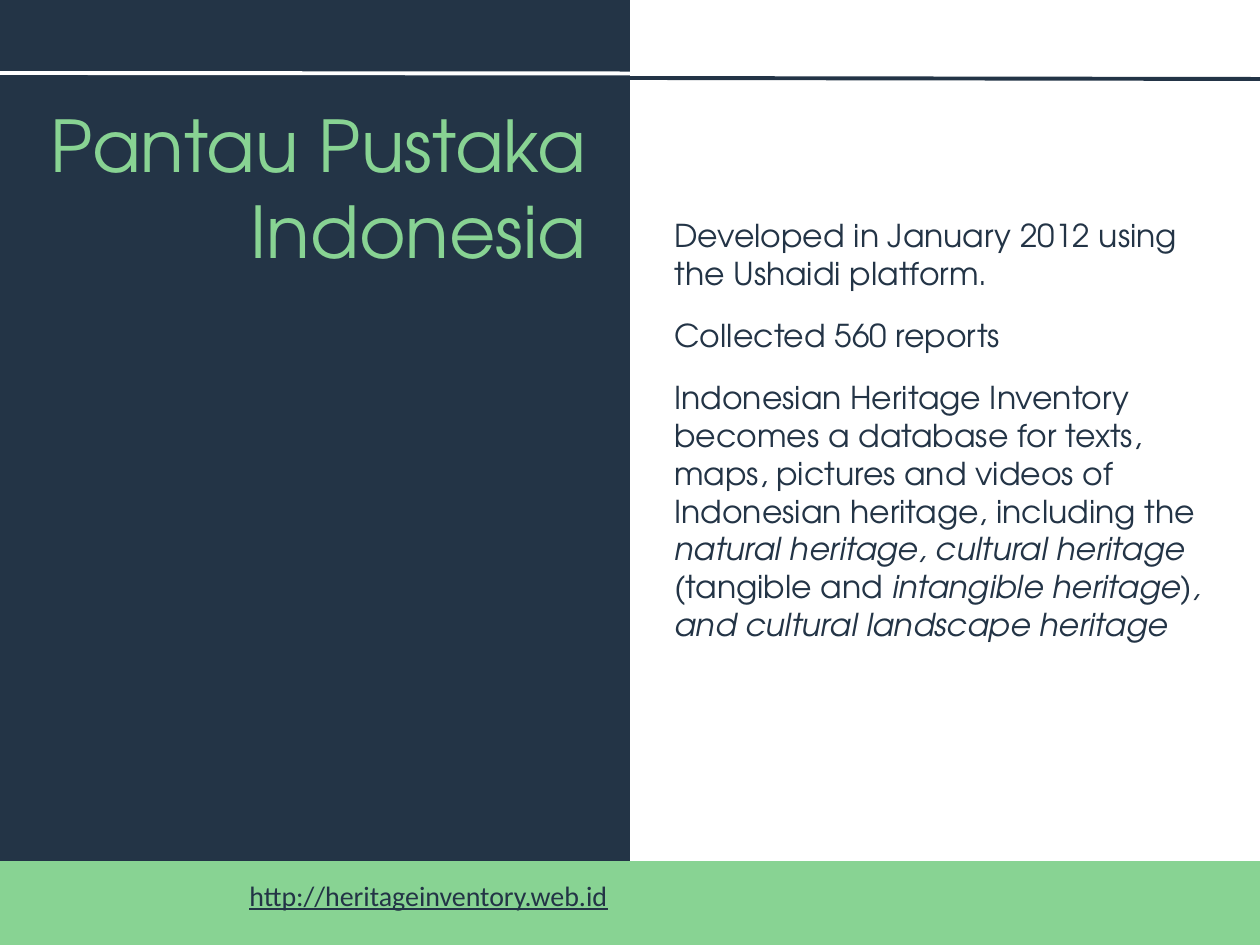
from lxml import etree
from pptx import Presentation
from pptx.dml.color import RGBColor
from pptx.enum.shapes import MSO_CONNECTOR, MSO_SHAPE
from pptx.enum.text import MSO_ANCHOR, PP_ALIGN
from pptx.oxml.ns import qn
from pptx.util import Emu, Pt

NAVY = RGBColor(0x23, 0x34, 0x46)
GREEN = RGBColor(0x88, 0xD3, 0x93)
WHITE = RGBColor(0xFF, 0xFF, 0xFF)
RECT = MSO_SHAPE.RECTANGLE
STRAIGHT = MSO_CONNECTOR.STRAIGHT
TOP = MSO_ANCHOR.TOP
LEFT, RIGHT = PP_ALIGN.LEFT, PP_ALIGN.RIGHT

WIDTH, HEIGHT, MIDDLE = 1260, 945, 630
TEXT_WIDTH = 567
BODY_LEFT = 662

TITLE = {"name": "TeX Gyre Adventor", "size": Pt(40.8), "color": GREEN}
BODY = {"name": "TeX Gyre Adventor", "size": Pt(18), "color": NAVY}
ITALIC = {**BODY, "italic": True}
LINK = {"name": "Calibri", "size": Pt(16), "color": NAVY, "underline": True}

BODY_TEXTS = [
    (210, 127, [("Developed in January 2012 using the Ushaidi platform.", BODY)]),
    (310, 89, [("Collected 560 reports", BODY)]),
    (372, 280, [
        ("Indonesian Heritage Inventory becomes a database for texts, maps, "
         "pictures and videos of Indonesian heritage, including the ", BODY),
        ("natural heritage, cultural heritage ", ITALIC),
        ("(tangible and ", BODY),
        ("intangible heritage), and cultural landscape heritage", ITALIC),
    ]),
]


def px(n):
    return Emu(round(n * 914400 / 126))


def add_panel(s, x, y, w, h, color):
    sp = s.shapes.add_shape(RECT, px(x), px(y), px(w), px(h))
    sp.shadow.inherit = False
    sp.fill.solid()
    sp.fill.fore_color.rgb = color
    sp.line.fill.background()


def add_rule(s, x1, y1, x2, y2, color):
    line = s.shapes.add_connector(STRAIGHT, px(x1), px(y1), px(x2), px(y2))
    line.line.color.rgb = color
    line.line.width = Pt(2.25)
    etree.SubElement(line._element.spPr, qn("a:effectLst"))


def add_text(s, x, y, h, runs, align=LEFT):
    """Add a one-paragraph box; runs is a list of (text, font format)."""
    tf = s.shapes.add_textbox(px(x), px(y), px(TEXT_WIDTH), px(h)).text_frame
    tf.word_wrap = True
    tf.vertical_anchor = TOP
    p = tf.paragraphs[0]
    p.alignment = align
    for text, style in runs:
        r = p.add_run()
        r.text = text
        for key, value in style.items():
            if key == "color":
                r.font.color.rgb = value
            else:
                setattr(r.font, key, value)


def main():
    prs = Presentation()
    prs.slide_width, prs.slide_height = px(WIDTH), px(HEIGHT)
    s = prs.slides.add_slide(prs.slide_layouts[6])

    add_panel(s, 0, 0, MIDDLE, HEIGHT, NAVY)
    add_panel(s, 0, 861, WIDTH, 84, GREEN)
    add_rule(s, 0, 73, WIDTH, 74, WHITE)
    add_rule(s, MIDDLE, 78, WIDTH, 79, NAVY)

    add_text(s, 32, 95, 168, [("Pantau Pustaka Indonesia", TITLE)], RIGHT)
    add_text(s, 53, 872, 73, [("http://heritageinventory.web.id", LINK)], RIGHT)
    for y, h, runs in BODY_TEXTS:
        add_text(s, BODY_LEFT, y, h, runs)

    prs.save("out.pptx")


if __name__ == "__main__":
    main()
